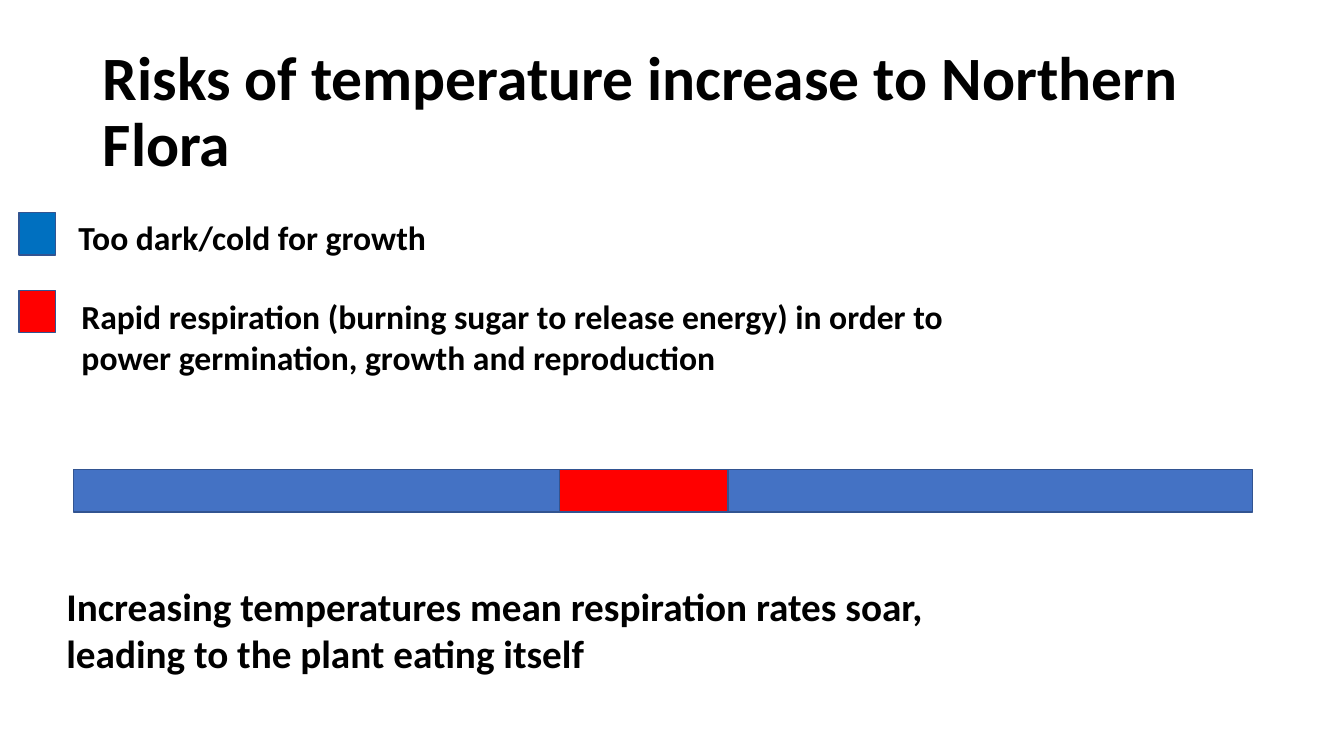
from pptx import Presentation
from pptx.dml.color import RGBColor
from pptx.enum import shapes, text
from pptx.util import Inches, Pt

BLACK = RGBColor(0x00, 0x00, 0x00)
SEASON_BLUE = RGBColor(0x44, 0x72, 0xC4)
KEY_BLUE = RGBColor(0x00, 0x70, 0xC0)
RED = RGBColor(0xFF, 0x00, 0x00)
OUTLINE = RGBColor(0x32, 0x54, 0x91)


def write(text_frame, lines, size):
    text_frame.word_wrap = True
    text_frame.text = "\n".join(lines)
    for paragraph in text_frame.paragraphs:
        paragraph.alignment = text.PP_ALIGN.LEFT
        font = paragraph.runs[0].font
        font.name, font.size, font.bold = "Calibri", Pt(size), True
        font.color.rgb = BLACK


presentation = Presentation()
presentation.slide_width = Inches(13.33)
presentation.slide_height = Inches(7.5)
slide = presentation.slides.add_slide(presentation.slide_layouts[5])

# Title
title = slide.shapes.title
title.left, title.top = Inches(0.92), Inches(0.4)
title.width, title.height = Inches(11.5), Inches(1.45)
title.text_frame.vertical_anchor = text.MSO_ANCHOR.MIDDLE
write(title.text_frame, ["Risks of temperature increase to Northern Flora"], 44)
title.text_frame.paragraphs[0].line_spacing = 0.9

# Year bar with its growing season, then the two key swatches
for left, top, width, color in [
    (0.73, 4.66, 11.69, SEASON_BLUE),
    (5.55, 4.66, 1.67, RED),
    (0.19, 2.11, 0.36, KEY_BLUE),
    (0.19, 2.88, 0.36, RED),
]:
    block = slide.shapes.add_shape(
        shapes.MSO_SHAPE.RECTANGLE,
        Inches(left), Inches(top), Inches(width), Inches(0.42),
    )
    block.shadow.inherit = False
    block.fill.solid()
    block.fill.fore_color.rgb = color
    block.line.color.rgb = OUTLINE
    block.line.width = Pt(1)

# Key labels and conclusion
for left, top, width, height, size, lines in [
    (0.68, 2.1, 3.99, 0.5, 24, ["Too dark/cold for growth"]),
    (0.71, 2.89, 8.91, 0.91, 24, [
        "Rapid respiration (burning sugar to release energy) in order to",
        "power germination, growth and reproduction",
    ]),
    (0.56, 5.73, 8.89, 1.04, 28, [
        "Increasing temperatures mean respiration rates soar,",
        "leading to the plant eating itself",
    ]),
]:
    label = slide.shapes.add_textbox(
        Inches(left), Inches(top), Inches(width), Inches(height)
    )
    write(label.text_frame, lines, size)
    label.text_frame.auto_size = text.MSO_AUTO_SIZE.SHAPE_TO_FIT_TEXT

presentation.save("out.pptx")
